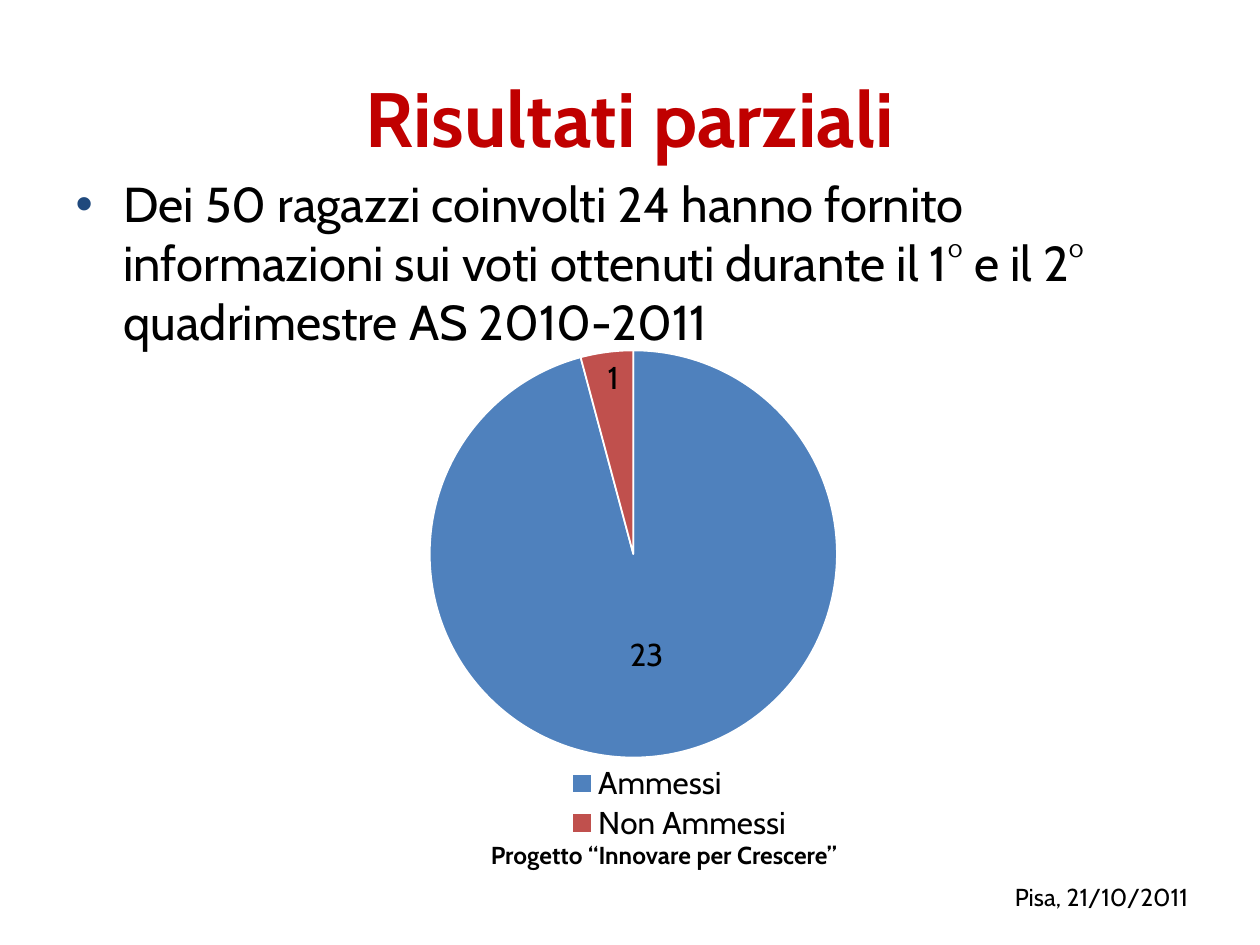
"""Build the partial results slide with a pie chart of admitted students."""
from lxml import etree
from pptx import Presentation
from pptx.chart.data import CategoryChartData
from pptx.dml.color import RGBColor
from pptx.enum.chart import XL_CHART_TYPE, XL_LABEL_POSITION, XL_LEGEND_POSITION
from pptx.enum.text import MSO_ANCHOR, MSO_AUTO_SIZE, PP_ALIGN
from pptx.oxml import parse_xml
from pptx.oxml.ns import nsdecls, qn
from pptx.util import Inches, Pt

PIE = XL_CHART_TYPE.PIE
RIGHT_LEGEND = XL_LEGEND_POSITION.RIGHT
CENTER, INSIDE_END = XL_LABEL_POSITION.CENTER, XL_LABEL_POSITION.INSIDE_END
FONT = "Cabin"


def set_text(sp, text, box, size, color="000000", bold=False,
             align=PP_ALIGN.LEFT, anchor=MSO_ANCHOR.TOP, bullet=None):
    sp.left, sp.top, sp.width, sp.height = [Inches(v) for v in box]
    tf = sp.text_frame
    tf.word_wrap = True
    tf.auto_size = MSO_AUTO_SIZE.NONE
    tf.vertical_anchor = anchor
    p = tf.paragraphs[0]
    p.alignment = align
    p.space_before = Pt(0)
    if bullet:
        pPr = p._p.get_or_add_pPr()
        pPr.set("marL", str(Inches(0.38)))
        pPr.set("indent", str(-Inches(0.38)))
        clr = etree.SubElement(pPr, qn("a:buClr"))
        etree.SubElement(clr, qn("a:srgbClr"), val=bullet)
        etree.SubElement(pPr, qn("a:buFont"), typeface="Arial")
        etree.SubElement(pPr, qn("a:buChar"), char="•")
    r = p.add_run()
    r.text = text
    r.font.name, r.font.size, r.font.bold = FONT, Pt(size), bold
    r.font.color.rgb = RGBColor.from_string(color)


def set_layout(parent, x, y, w, h, inner=False):
    for old in parent.findall(qn("c:layout")):
        parent.remove(old)
    target = '<c:layoutTarget val="inner"/>' if inner else ""
    layout = parse_xml(
        f'<c:layout {nsdecls("c")}><c:manualLayout>{target}'
        '<c:xMode val="edge"/><c:yMode val="edge"/>'
        f'<c:x val="{x}"/><c:y val="{y}"/><c:w val="{w}"/><c:h val="{h}"/>'
        '</c:manualLayout></c:layout>')
    parent.insert(0 if inner else 1, layout)


prs = Presentation()
prs.slide_width, prs.slide_height = Inches(10), Inches(7.5)
s = prs.slides.add_slide(prs.slide_layouts[1])

set_text(s.shapes.title, "Risultati parziali", (0.5, 0.3, 9, 1.25), 44,
         color="C00000", bold=True, align=PP_ALIGN.CENTER,
         anchor=MSO_ANCHOR.MIDDLE)
set_text(s.placeholders[1],
         "Dei 50 ragazzi coinvolti 24 hanno fornito informazioni sui voti "
         "ottenuti durante il 1° e il 2° quadrimestre AS 2010-2011",
         (0.5, 1.33, 9, 5.37), 28, bullet="1F497D")

data = CategoryChartData()
data.categories = ["Ammessi", "Non Ammessi"]
data.add_series("Series 1", [23, 1])
chart = s.shapes.add_chart(PIE, Inches(2.97), Inches(2.66), Inches(4.84),
                           Inches(4.04), data).chart
chart.has_title = False
chart.font.name, chart.font.size = FONT, Pt(18)
chart.font.color.rgb = RGBColor.from_string("000000")
chart.has_legend = True
chart.legend.position = RIGHT_LEGEND
chart.legend.include_in_layout = False
chart.legend.font.size = Pt(18)

plot = chart.plots[0]
plot.vary_by_categories = True
plot.has_data_labels = True
plot.data_labels.show_value = True
plot.data_labels.show_percentage = False
plot.data_labels.font.size = Pt(18)
slices = [("4F81BD", CENTER), ("C0504D", INSIDE_END)]
for i, (color, position) in enumerate(slices):
    point = plot.series[0].points[i]
    point.format.fill.solid()
    point.format.fill.fore_color.rgb = RGBColor.from_string(color)
    point.format.line.color.rgb = RGBColor.from_string("FFFFFF")
    point.format.line.width = Pt(1)
    point.data_label.font.size = Pt(18)
    point.data_label.position = position

set_layout(chart._chartSpace.chart.plotArea, 0.09, 0.03, 0.67, 0.8, inner=True)
set_layout(chart.legend._element, 0.27, 0.84, 0.46, 0.16)

footers = [
    ("Progetto “Innovare per Crescere”", (3.28, 6.62, 3.98, 0.34), True,
     PP_ALIGN.CENTER),
    ("Pisa, 21/10/2011", (7.5, 6.95, 2.03, 0.34), False, PP_ALIGN.RIGHT),
]
for text, box, bold, align in footers:
    sp = s.shapes.add_textbox(*[Inches(v) for v in box])
    set_text(sp, text, box, 14, bold=bold, align=align)

prs.save("out.pptx")
